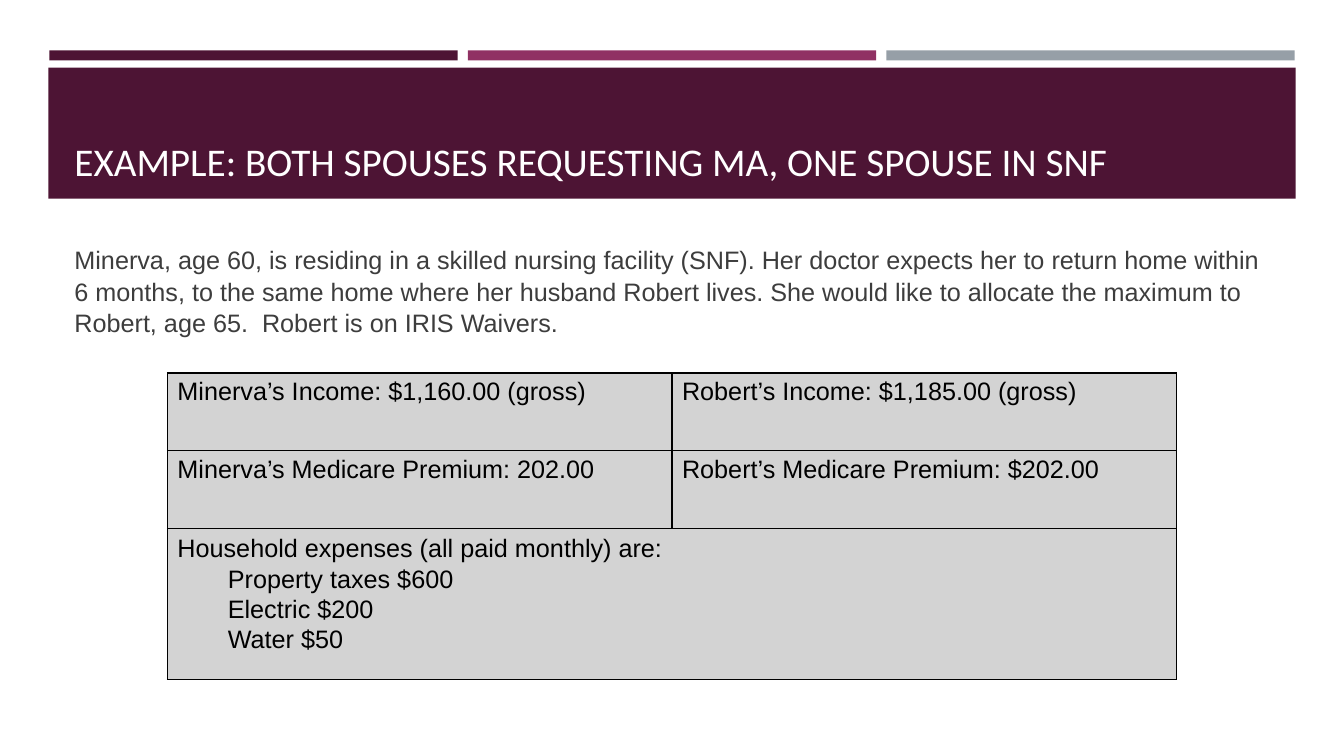
from lxml import etree
from pptx import Presentation
from pptx.dml.color import RGBColor
from pptx.enum.shapes import MSO_SHAPE
from pptx.enum.text import MSO_ANCHOR, PP_ALIGN
from pptx.oxml.ns import qn
from pptx.util import Inches, Pt

RECTANGLE = MSO_SHAPE.RECTANGLE
TOP, BOTTOM = MSO_ANCHOR.TOP, MSO_ANCHOR.BOTTOM
LEFT = PP_ALIGN.LEFT

PLUM = RGBColor(0x4D, 0x14, 0x34)
MAGENTA = RGBColor(0x90, 0x31, 0x63)
SLATE = RGBColor(0x96, 0x9F, 0xA7)
WHITE = RGBColor(0xFF, 0xFF, 0xFF)
CHARCOAL = RGBColor(0x3D, 0x3D, 0x3D)
BLACK = RGBColor(0, 0, 0)
LIGHT_GRAY = RGBColor(0xD3, 0xD3, 0xD3)

TITLE = "EXAMPLE: BOTH SPOUSES REQUESTING MA, ONE SPOUSE IN SNF"
SITUATION = (
    "Minerva, age 60, is residing in a skilled nursing facility (SNF). "
    "Her doctor expects her to return home within 6 months, to the same home "
    "where her husband Robert lives. She would like to allocate the maximum to "
    "Robert, age 65.  Robert is on IRIS Waivers."
)
SPOUSE_FACTS = [
    ("Minerva’s Income: $1,160.00 (gross)", "Robert’s Income: $1,185.00 (gross)"),
    ("Minerva’s Medicare Premium: 202.00", "Robert’s Medicare Premium: $202.00"),
]
EXPENSES_HEADING = "Household expenses (all paid monthly) are:"
EXPENSES = ["Property taxes $600", "Electric $200", "Water $50"]

ACCENT_COLORS = [PLUM, MAGENTA, SLATE]
ACCENT_LEFT, ACCENT_WIDTH, ACCENT_STEP = 0.49, 4.05, 4.15
ROW_HEIGHTS = [0.77, 0.77, 1.5]
COLUMN_WIDTH = 5.005


def write(frame, text, size=18, font="Arial", color=BLACK, spacing=1.0,
          indent=0, anchor=TOP, added=False):
    frame.word_wrap = True
    frame.vertical_anchor = anchor
    paragraph = frame.add_paragraph() if added else frame.paragraphs[0]
    paragraph.alignment = LEFT
    paragraph.line_spacing = spacing
    if indent:
        paragraph.level = 1
        properties = paragraph._p.get_or_add_pPr()
        properties.set("marL", str(Inches(indent)))
        properties.set("indent", "0")
    run = paragraph.add_run()
    run.text = text
    run.font.size = Pt(size)
    run.font.name = font
    run.font.color.rgb = color


def add_band(slide, left, top, width, height, color):
    band = slide.shapes.add_shape(
        RECTANGLE, Inches(left), Inches(top), Inches(width), Inches(height))
    band.shadow.inherit = False
    band.fill.solid()
    band.fill.fore_color.rgb = color
    band.line.fill.background()


def add_text(slide, left, top, width, height, text, **style):
    box = slide.shapes.add_textbox(
        Inches(left), Inches(top), Inches(width), Inches(height))
    write(box.text_frame, text, **style)


def paint_cell(cell):
    properties = cell._tc.get_or_add_tcPr()
    for side in ("lnL", "lnR", "lnT", "lnB"):
        border = etree.SubElement(properties, qn("a:" + side), w=str(Pt(1)))
        fill = etree.SubElement(border, qn("a:solidFill"))
        etree.SubElement(fill, qn("a:srgbClr"), val=str(BLACK))
    cell.fill.solid()
    cell.fill.fore_color.rgb = LIGHT_GRAY


def add_facts_table(slide):
    facts = slide.shapes.add_table(
        len(ROW_HEIGHTS), 2, Inches(1.66), Inches(3.7),
        Inches(2 * COLUMN_WIDTH), Inches(sum(ROW_HEIGHTS))).table
    facts.first_row = False
    facts.horz_banding = False
    for column in facts.columns:
        column.width = Inches(COLUMN_WIDTH)
    for row, height in zip(facts.rows, ROW_HEIGHTS):
        row.height = Inches(height)
        for cell in row.cells:
            paint_cell(cell)
    for row, spouses in enumerate(SPOUSE_FACTS):
        for column, fact in enumerate(spouses):
            write(facts.cell(row, column).text_frame, fact)
    household = facts.cell(2, 0)
    household.merge(facts.cell(2, 1))
    write(household.text_frame, EXPENSES_HEADING, spacing=1.07)
    for expense in EXPENSES:
        write(household.text_frame, expense, spacing=1.07, indent=0.5, added=True)


def main():
    deck = Presentation()
    deck.slide_width, deck.slide_height = Inches(13.33), Inches(7.5)
    slide = deck.slides.add_slide(deck.slide_layouts[6])
    for position, color in enumerate(ACCENT_COLORS):
        add_band(slide, ACCENT_LEFT + position * ACCENT_STEP, 0.5,
                 ACCENT_WIDTH, 0.1, color)
    add_band(slide, 0.48, 0.67, 12.37, 1.3, PLUM)
    add_text(slide, 0.64, 0.77, 12.06, 1.11, TITLE,
             size=28, font="Calibri", color=WHITE, anchor=BOTTOM)
    add_text(slide, 0.64, 2.36, 12.06, 1.0, SITUATION,
             color=CHARCOAL, spacing=1.05)
    add_facts_table(slide)
    deck.save("out.pptx")


if __name__ == "__main__":
    main()
